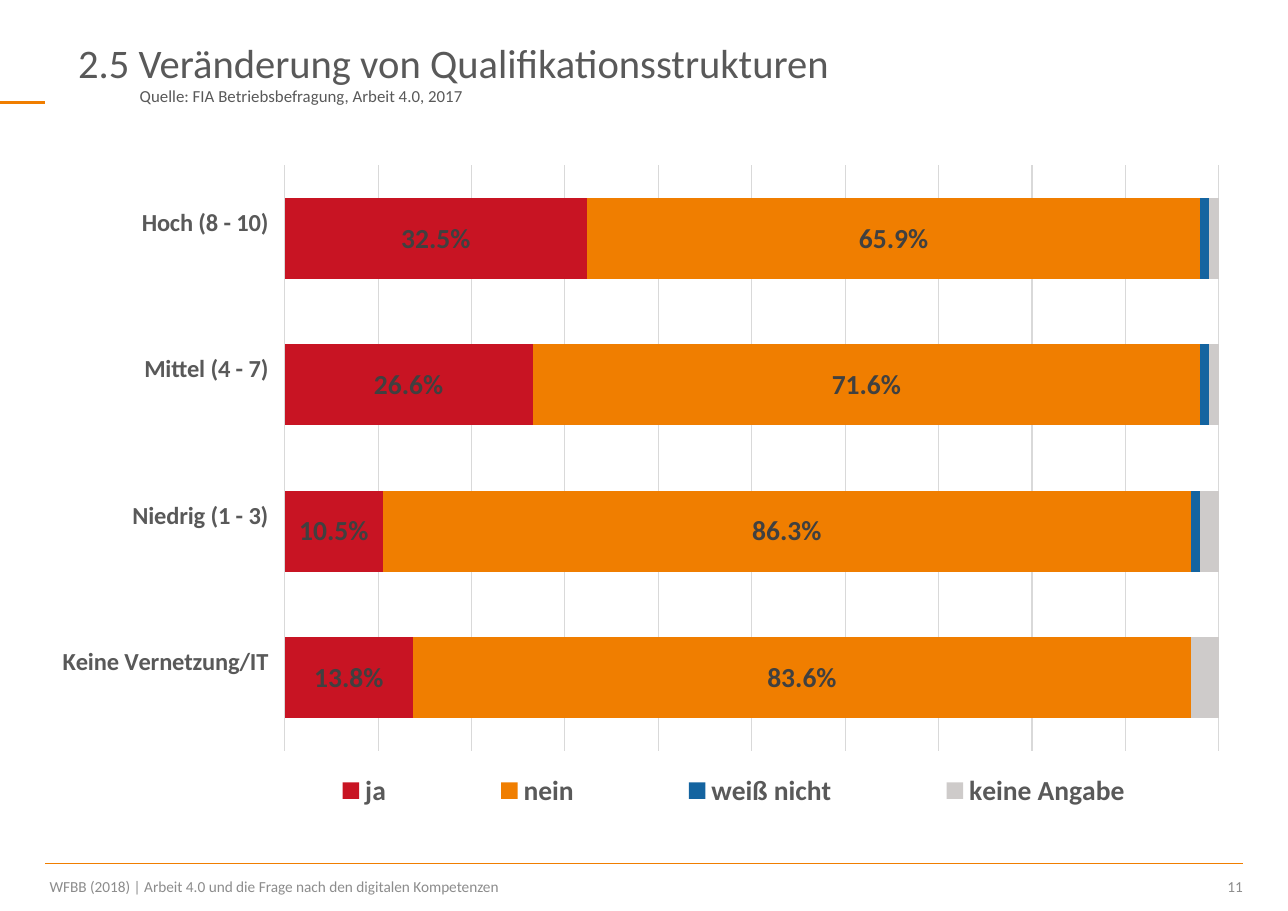
from lxml import etree
from pptx import Presentation
from pptx.chart.data import CategoryChartData
from pptx.dml.color import RGBColor
from pptx.enum.chart import XL_CHART_TYPE as ChartType
from pptx.enum.chart import XL_LEGEND_POSITION as LegendPosition
from pptx.enum.chart import XL_TICK_LABEL_POSITION as LabelPosition
from pptx.enum.chart import XL_TICK_MARK as TickMark
from pptx.enum.shapes import MSO_CONNECTOR as Connector
from pptx.enum.text import MSO_ANCHOR as Anchor
from pptx.enum.text import MSO_AUTO_SIZE as AutoSize
from pptx.enum.text import PP_ALIGN as Align
from pptx.oxml.ns import qn
from pptx.util import Inches, Pt

WIDTH, HEIGHT = 11.69, 8.27
LEFT, RIGHT = 0.41, 11.28
FONT = "Calibri"
ORANGE, GREY, DARK, LIGHT, FOOTER = "F07E00", "595959", "404040", "D9D9D9", "8C8C8C"

# The closing line break lifts each label above the middle of its bar
CATEGORIES = ["Keine Vernetzung/IT \n", "Niedrig (1 - 3) \n", "Mittel (4 - 7) \n", "Hoch (8 - 10) \n"]
# Name, values, colour, labelled
SERIES = [
    ("ja", (0.138, 0.105, 0.266, 0.325), "C81423", True),
    ("nein", (0.836, 0.863, 0.716, 0.659), ORANGE, True),
    ("weiß nicht", (0, 0.01, 0.01, 0.01), "1464A0", False),
    ("keine Angabe", (0.03, 0.02, 0.01, 0.01), "CECBCA", False),
]
PERCENT = "###0.0%"


def color(value):
    return RGBColor.from_string(value)


def set_font(font, size, value, bold=False):
    font.name, font.size, font.bold = FONT, Pt(size), bold
    font.color.rgb = color(value)


def fill_text(shape, text, size, value, align=Align.LEFT):
    frame = shape.text_frame
    frame.word_wrap = True
    frame.auto_size = AutoSize.NONE
    frame.text = text
    paragraph = frame.paragraphs[0]
    paragraph.alignment = align
    set_font(paragraph.font, size, value)
    return frame


def add_text(slide, box, text, size, value, align=Align.LEFT):
    shape = slide.shapes.add_textbox(*map(Inches, box))
    return fill_text(shape, text, size, value, align)


def add_rule(slide, left, right, y, weight):
    rule = slide.shapes.add_connector(
        Connector.STRAIGHT, Inches(left), Inches(y), Inches(right), Inches(y))
    rule.line.color.rgb = color(ORANGE)
    rule.line.width = Pt(weight)
    etree.SubElement(rule._element.spPr, qn("a:effectLst"))


def set_layout(element, inner=False, **shares):
    """Place a chart part by shares of the chart's size."""
    for old in element.findall(qn("c:layout")):
        element.remove(old)
    layout = etree.Element(qn("c:layout"))
    manual = etree.SubElement(layout, qn("c:manualLayout"))
    settings = {"layoutTarget": "inner"} if inner else {}
    settings.update(xMode="edge", yMode="edge", **shares)
    for name, value in settings.items():
        etree.SubElement(manual, qn("c:" + name)).set("val", str(value))
    position = element.find(qn("c:legendPos"))
    element.insert(0 if position is None else element.index(position) + 1, layout)


def add_header(slide, left, top, width, height):
    title = slide.shapes.title
    title.left, title.top, title.width, title.height = map(Inches, (left, top, width, height))
    frame = fill_text(title, "2.5 Veränderung von Qualifikationsstrukturen", 26.5, GREY)
    frame.vertical_anchor = Anchor.MIDDLE
    source_box = (left + 0.56, top + 0.8 * height, 5.8, 0.29)
    add_text(slide, source_box, "Quelle: FIA Betriebsbefragung, Arbeit 4.0, 2017", 11, GREY)
    add_rule(slide, 0, LEFT, 0.93, 2)


def add_answer_chart(slide, left, top, width, height):
    data = CategoryChartData(number_format=PERCENT)
    data.categories = CATEGORIES
    for name, values, *_ in SERIES:
        data.add_series(name, values)
    chart = slide.shapes.add_chart(
        ChartType.BAR_STACKED_100, *map(Inches, (left, top, width, height)), data).chart
    chart.has_title = False
    set_font(chart.font, 10, "000000")

    # Bars and their labels
    plot = chart.plots[0]
    plot.gap_width, plot.overlap = 81, 100
    plot.vary_by_categories = False
    for series, (_, _, fill, labelled) in zip(plot.series, SERIES):
        series.format.fill.solid()
        series.format.fill.fore_color.rgb = color(fill)
        if labelled:
            labels = series.data_labels
            labels.show_value = True
            labels.number_format, labels.number_format_is_linked = PERCENT, False
            set_font(labels.font, 18, DARK, bold=True)

    # Axes
    categories, values = chart.category_axis, chart.value_axis
    categories.major_tick_mark = categories.minor_tick_mark = TickMark.NONE
    categories.tick_label_position = LabelPosition.LOW
    set_font(categories.tick_labels.font, 16, GREY, bold=True)
    values.visible = False
    values.minimum_scale, values.maximum_scale, values.major_unit = 0, 1, 0.1
    values.has_major_gridlines = True
    for line in (categories.format.line, values.major_gridlines.format.line):
        line.color.rgb = color(LIGHT)
        line.width = Pt(0.75)

    # Legend and plot area
    chart.has_legend = True
    legend = chart.legend
    legend.position, legend.include_in_layout = LegendPosition.BOTTOM, False
    set_font(legend.font, 18, GREY, bold=True)
    set_layout(legend._element, x=0.16, y=0.92, w=0.83, h=0.08)
    plot_area = chart._chartSpace.chart.plotArea
    set_layout(plot_area, inner=True, x=0.2, y=0.02, w=0.78, h=0.88)


def add_footer(slide, left, top, width, height):
    number_width = 0.7
    text_width = width - number_width
    parts = [
        (left, text_width, "WFBB (2018) | Arbeit 4.0 und die Frage nach den digitalen Kompetenzen",
         Align.LEFT, 0.04),
        (left + text_width, number_width, "11", Align.RIGHT, 0),
    ]
    add_rule(slide, left, left + width, top, 1)
    for x, part_width, text, align, indent in parts:
        frame = add_text(slide, (x, top, part_width, height), text, 10, FOOTER, align)
        frame.margin_left, frame.margin_top = Inches(indent), Inches(0.12)
        frame.margin_right = frame.margin_bottom = 0


def main():
    presentation = Presentation()
    presentation.slide_width, presentation.slide_height = Inches(WIDTH), Inches(HEIGHT)
    slide = presentation.slides.add_slide(presentation.slide_layouts[5])
    add_header(slide, 0.61, 0.29, 7.84, 0.55)
    add_answer_chart(slide, LEFT, 1.38, RIGHT - LEFT, 6.04)
    add_footer(slide, LEFT, 7.84, RIGHT - LEFT, 0.41)
    presentation.save("out.pptx")


if __name__ == "__main__":
    main()
